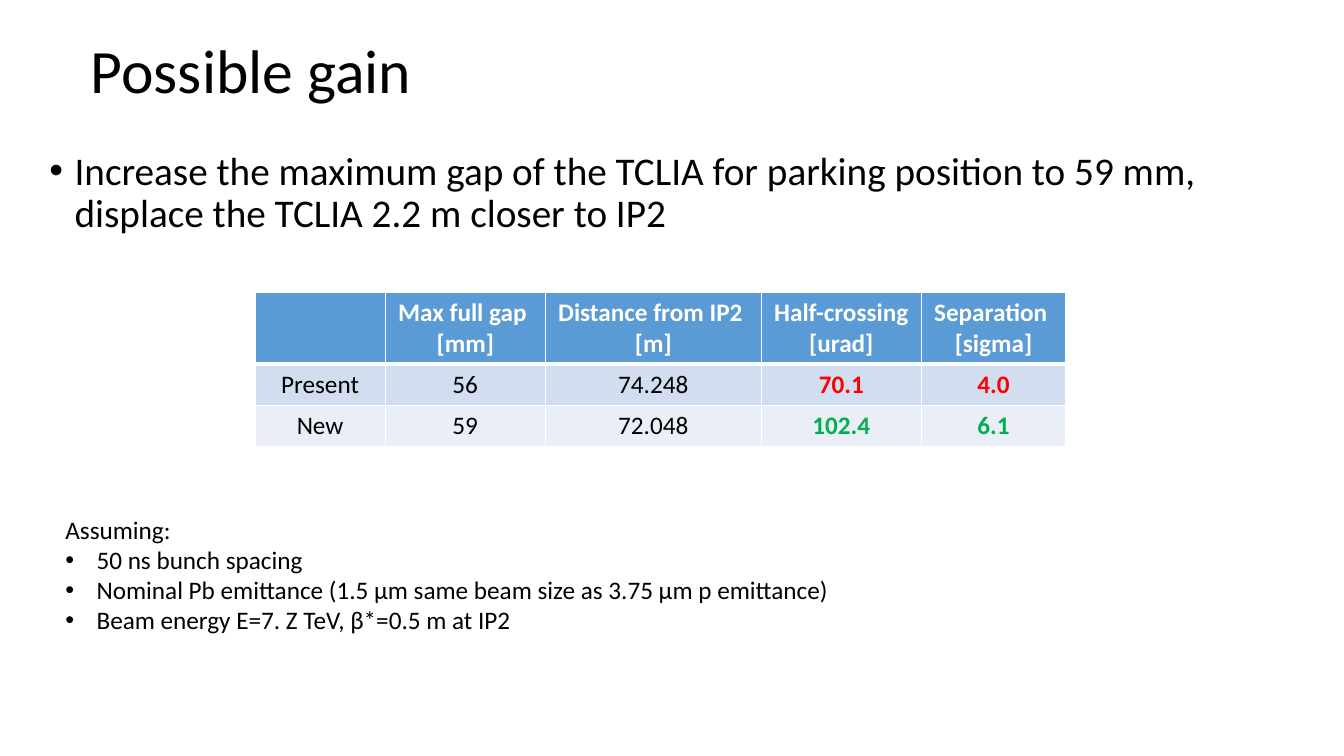
"""Build the "Possible gain" slide with its parameter table and assumptions."""
from lxml import etree
from pptx import Presentation
from pptx.dml.color import RGBColor
from pptx.enum.text import MSO_ANCHOR, MSO_AUTO_SIZE, PP_ALIGN
from pptx.oxml.ns import qn
from pptx.util import Inches, Pt

TITLE = "Possible gain"
PROPOSAL = ("Increase the maximum gap of the TCLIA for parking position to 59 mm, "
            "displace the TCLIA 2.2 m closer to IP2")
HEADER = [(), ("Max full gap ", "[mm]"), ("Distance from IP2 ", "[m]"),
          ("Half-crossing", "[urad]"), ("Separation ", "[sigma]")]
ROWS = [("Present", "56", "74.248", "70.1", "4.0"),
        ("New", "59", "72.048", "102.4", "6.1")]
ASSUMING = "Assuming:"
ASSUMPTIONS = ["50 ns bunch spacing",
               "Nominal Pb emittance (1.5 µm same beam size as 3.75 µm p emittance)",
               "Beam energy E=7. Z TeV, β*=0.5 m at IP2"]

FONT = "Calibri"
BLACK = RGBColor(0x00, 0x00, 0x00)
WHITE = RGBColor(0xFF, 0xFF, 0xFF)
HEADER_FILL = RGBColor(0x5B, 0x9B, 0xD5)
ROW_FILLS = [RGBColor(0xD2, 0xDE, 0xEF), RGBColor(0xEA, 0xEF, 0xF7)]
RESULT_COLORS = [RGBColor(0xFF, 0x00, 0x00), RGBColor(0x00, 0xB0, 0x50)]
FIRST_RESULT_COL = 3

LEFT, CENTER = PP_ALIGN.LEFT, PP_ALIGN.CENTER
TOP, MIDDLE = MSO_ANCHOR.TOP, MSO_ANCHOR.MIDDLE
NO_FIT = MSO_AUTO_SIZE.NONE

TITLE_BOX = (0.8, 0, 11.5, 1.45)
BODY_BOX = (0.39, 1.45, 12.57, 4.76)
NOTE_BOX = (0.55, 5.05, 8.33, 1.31)
TABLE_LEFT, TABLE_TOP = 2.53, 2.9
COL_WIDTHS = [1.29, 1.59, 2.14, 1.59, 1.43]
ROW_HEIGHTS = [0.7, 0.41, 0.41]


def place(sp, box, anchor):
    sp.left, sp.top, sp.width, sp.height = map(Inches, box)
    tf = sp.text_frame
    tf.word_wrap = True
    tf.auto_size = NO_FIT
    tf.vertical_anchor = anchor
    return tf


def write(p, text, size, color=BLACK, bold=False, align=LEFT):
    p.alignment = align
    r = p.add_run()
    r.text = text
    font = r.font
    font.name, font.size, font.bold = FONT, Pt(size), bold
    font.color.rgb = color


def add_bullet(p, indent):
    pPr = p._p.get_or_add_pPr()
    pPr.set("marL", str(Inches(indent)))
    pPr.set("indent", str(-Inches(indent)))
    etree.SubElement(pPr, qn("a:buFont"), typeface="Arial")
    etree.SubElement(pPr, qn("a:buChar"), char="•")


def add_borders(cell, bottom):
    tcPr = cell._tc.get_or_add_tcPr()
    for side, width in (("L", 1), ("R", 1), ("T", 1), ("B", bottom)):
        ln = etree.SubElement(tcPr, qn(f"a:ln{side}"), w=str(Pt(width)))
        fill = etree.SubElement(ln, qn("a:solidFill"))
        etree.SubElement(fill, qn("a:srgbClr"), val=str(WHITE))


def fill_cell(cell, lines, fill, color, bold, bottom=1):
    add_borders(cell, bottom)
    cell.fill.solid()
    cell.fill.fore_color.rgb = fill
    tf = cell.text_frame
    for i, line in enumerate(lines):
        p = tf.add_paragraph() if i else tf.paragraphs[0]
        write(p, line, 18, color, bold, CENTER)


def add_gain_table(s):
    table = s.shapes.add_table(
        len(ROW_HEIGHTS), len(COL_WIDTHS), Inches(TABLE_LEFT), Inches(TABLE_TOP),
        Inches(sum(COL_WIDTHS)), Inches(sum(ROW_HEIGHTS))).table
    for col, width in zip(table.columns, COL_WIDTHS):
        col.width = Inches(width)
    for row, height in zip(table.rows, ROW_HEIGHTS):
        row.height = Inches(height)
    for c, lines in enumerate(HEADER):
        fill_cell(table.cell(0, c), lines, HEADER_FILL, WHITE, True, bottom=3)
    for r, values in enumerate(ROWS):
        for c, value in enumerate(values):
            result = c >= FIRST_RESULT_COL
            color = RESULT_COLORS[r] if result else BLACK
            fill_cell(table.cell(r + 1, c), [value], ROW_FILLS[r], color, result)


def main():
    prs = Presentation()
    prs.slide_width, prs.slide_height = Inches(13.33), Inches(7.5)
    s = prs.slides.add_slide(prs.slide_layouts[1])

    p = place(s.shapes.title, TITLE_BOX, MIDDLE).paragraphs[0]
    p.line_spacing = 0.9
    write(p, TITLE, 44)

    p = place(s.placeholders[1], BODY_BOX, TOP).paragraphs[0]
    p.line_spacing = 0.9
    p.space_before = Pt(0)
    add_bullet(p, 0.25)
    write(p, PROPOSAL, 28)

    add_gain_table(s)

    note = s.shapes.add_textbox(*map(Inches, NOTE_BOX))
    tf = place(note, NOTE_BOX, TOP)
    write(tf.paragraphs[0], ASSUMING, 18)
    for text in ASSUMPTIONS:
        p = tf.add_paragraph()
        add_bullet(p, 0.31)
        write(p, text, 18)

    prs.save("out.pptx")


if __name__ == "__main__":
    main()
